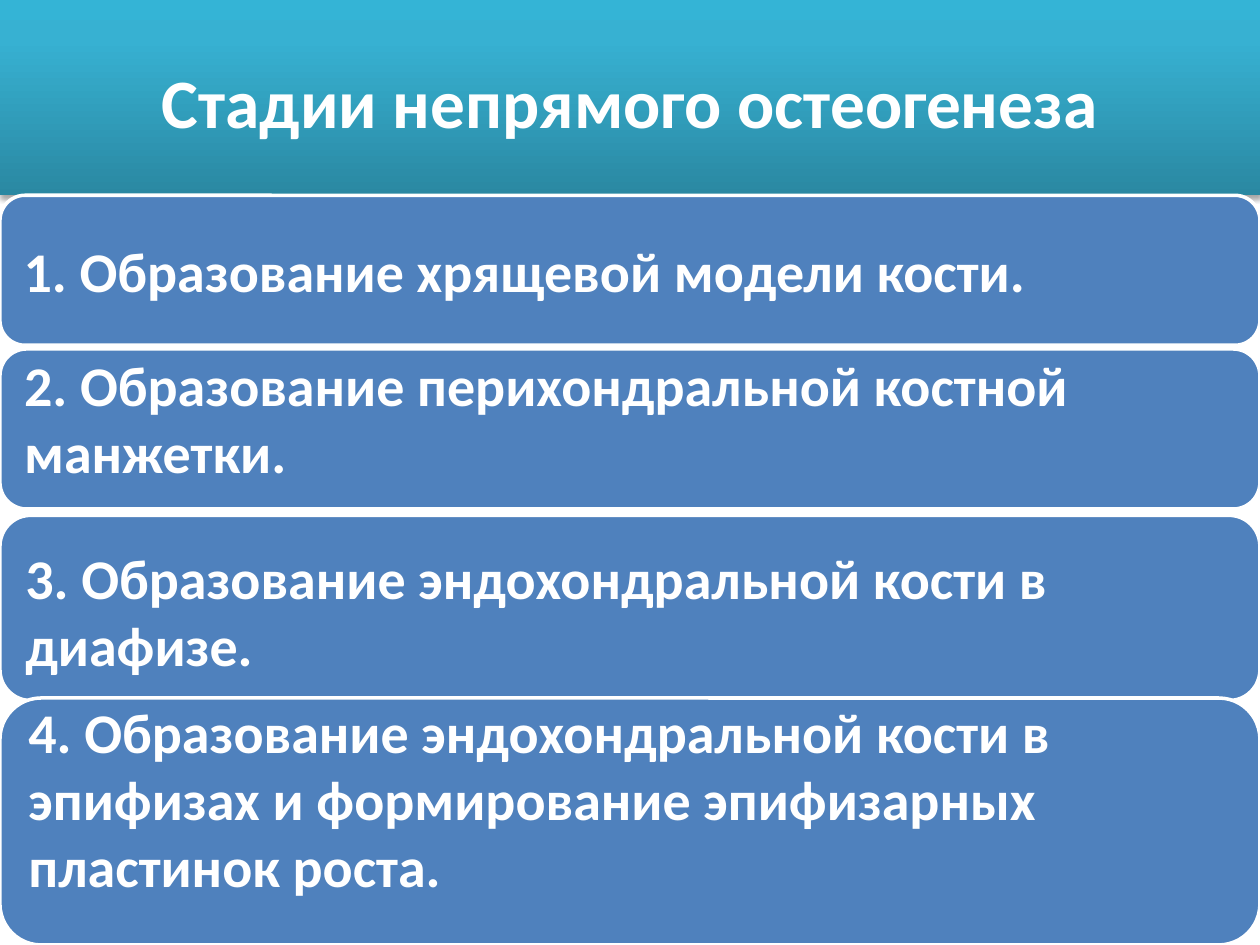
from dataclasses import dataclass

import pptx
import pptx.dml.color
import pptx.enum.shapes
import pptx.enum.text
import pptx.oxml
import pptx.oxml.ns
import pptx.slide
import pptx.text.text
import pptx.util

Inches = pptx.util.Inches
Pt = pptx.util.Pt

COLORS = {
    "card": "4F81BD",
    "white": "FFFFFF",
    "title_dark": "2A88A2",
    "title_middle": "37B1D2",
    "title_light": "34B4D6",
    "shadow": "000000",
}
FONT = "Calibri"
SLIDE_WIDTH = 10
TITLE_HEIGHT = 1.55
SIDE_INSET = 0.13


@dataclass
class StageCard:
    text: str
    top: float
    height: float
    bottom_inset: float


STAGES = [
    StageCard("1. Образование хрящевой модели кости.", 1.55, 1.19, 0.27),
    StageCard("2. Образование перихондральной костной манжетки.", 2.77, 1.27, 0.13),
    StageCard("3. Образование эндохондральной кости в диафизе.", 4.09, 1.47, 0.11),
    StageCard(
        "4. Образование эндохондральной кости в эпифизах и формирование "
        "эпифизарных пластинок роста.", 5.54, 1.96, 0.27),
]


def color(name: str) -> pptx.dml.color.RGBColor:
    return pptx.dml.color.RGBColor.from_string(COLORS[name])


def write_text(
    frame: pptx.text.text.TextFrame,
    text: str,
    size: float,
    alignment: pptx.enum.text.PP_ALIGN,
    anchor: pptx.enum.text.MSO_ANCHOR,
) -> None:
    frame.text = text
    frame.word_wrap = True
    frame.auto_size = pptx.enum.text.MSO_AUTO_SIZE.NONE
    frame.vertical_anchor = anchor
    paragraph = frame.paragraphs[0]
    paragraph.alignment = alignment
    font = paragraph.runs[0].font
    font.name = FONT
    font.size = Pt(size)
    font.bold = True
    font.color.rgb = color("white")


def style_title_band(shape_properties) -> None:
    namespace = pptx.oxml.ns.nsdecls("a")
    stops = [(0, "title_dark"), (80, "title_middle"), (100, "title_light")]
    stop_xml = "".join(
        f'<a:gs pos="{position * 1000}"><a:srgbClr val="{COLORS[name]}"/></a:gs>'
        for position, name in stops
    )
    shape_properties.append(pptx.oxml.parse_xml(
        f'<a:gradFill {namespace} rotWithShape="1"><a:gsLst>{stop_xml}</a:gsLst>'
        '<a:lin ang="16200000" scaled="0"/></a:gradFill>'
    ))
    shape_properties.append(pptx.oxml.parse_xml(
        f'<a:effectLst {namespace}><a:outerShdw blurRad="{Pt(3.1)}" '
        f'dist="{Pt(1.8)}" dir="5400000" rotWithShape="0">'
        f'<a:srgbClr val="{COLORS["shadow"]}"><a:alpha val="35000"/></a:srgbClr>'
        '</a:outerShdw></a:effectLst>'
    ))


def draw_title(slide: pptx.slide.Slide, text: str) -> None:
    title = slide.shapes.title
    title.left, title.top = Inches(0), Inches(0)
    title.width, title.height = Inches(SLIDE_WIDTH), Inches(TITLE_HEIGHT)
    style_title_band(title.element.spPr)
    write_text(title.text_frame, text, 39.6,
               pptx.enum.text.PP_ALIGN.CENTER, pptx.enum.text.MSO_ANCHOR.MIDDLE)
    title.text_frame.margin_top = Inches(0.1)
    title.text_frame.margin_bottom = Inches(0.05)


def draw_stage(slide: pptx.slide.Slide, stage: StageCard) -> None:
    card = slide.shapes.add_shape(
        pptx.enum.shapes.MSO_SHAPE.ROUNDED_RECTANGLE,
        Inches(0), Inches(stage.top), Inches(SLIDE_WIDTH), Inches(stage.height),
    )
    card.shadow.inherit = False
    card.fill.solid()
    card.fill.fore_color.rgb = color("card")
    card.line.color.rgb = color("white")
    card.line.width = Pt(2)
    frame = card.text_frame
    write_text(frame, stage.text, 32,
               pptx.enum.text.PP_ALIGN.LEFT, pptx.enum.text.MSO_ANCHOR.BOTTOM)
    frame.margin_left = frame.margin_right = Inches(SIDE_INSET)
    frame.margin_top = Inches(0)
    frame.margin_bottom = Inches(stage.bottom_inset)


def main() -> None:
    presentation = pptx.Presentation()
    presentation.slide_width = Inches(SLIDE_WIDTH)
    presentation.slide_height = Inches(7.5)
    slide = presentation.slides.add_slide(presentation.slide_layouts[5])
    draw_title(slide, "Стадии непрямого остеогенеза")
    for stage in STAGES:
        draw_stage(slide, stage)
    presentation.save("out.pptx")


if __name__ == "__main__":
    main()
